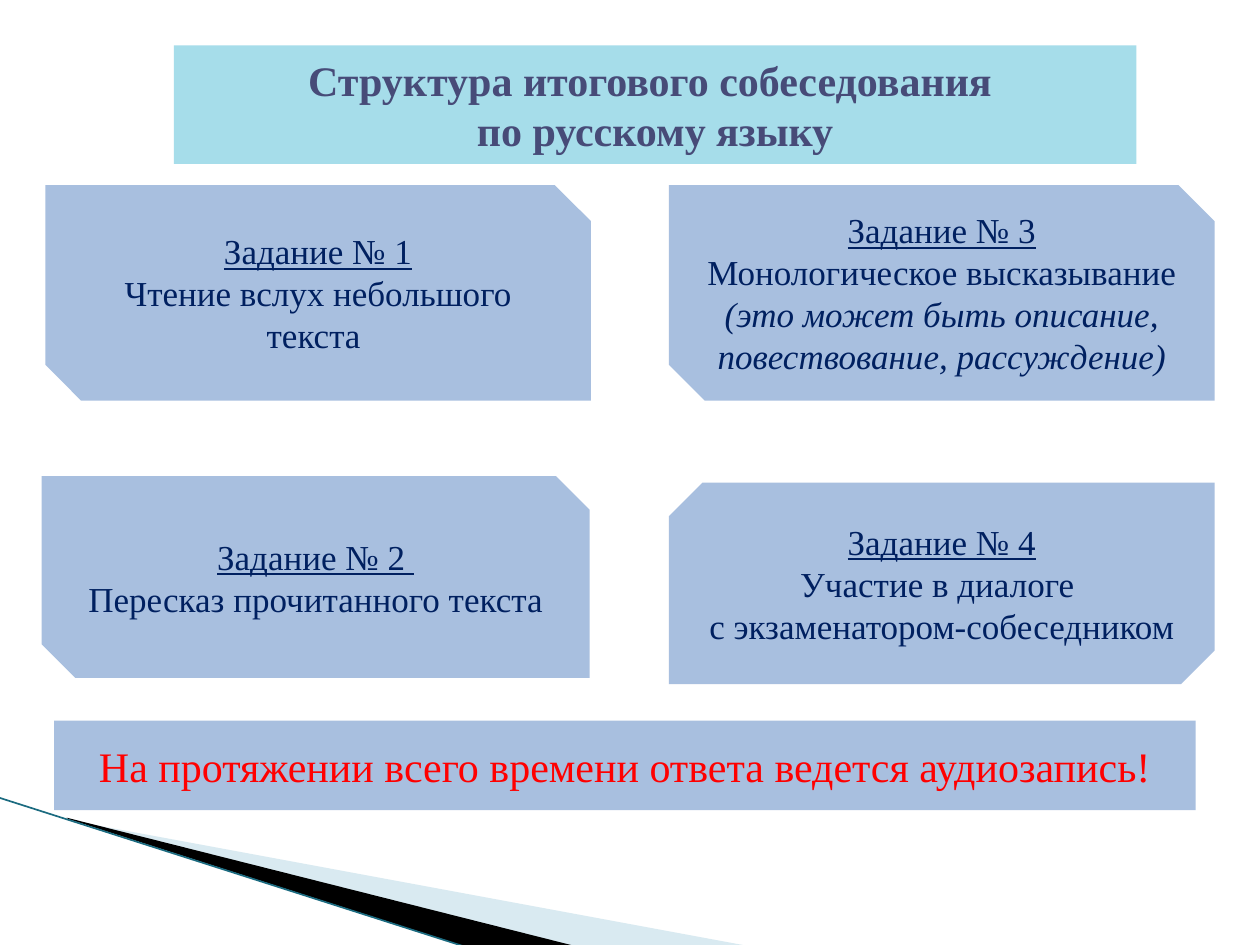
from lxml import etree
from pptx import Presentation
from pptx import util as u
from pptx.dml.color import RGBColor
from pptx.enum import shapes, text
from pptx.oxml.ns import qn

COLS, ROWS = 100, 75


def paint(color, code):
    color.rgb = RGBColor.from_string(code)


class Deck:
    face = "Times New Roman"
    navy, blue, snip = "002060", "A8BFDF", 0.1667

    def __init__(self):
        self.prs = Presentation()
        self.prs.slide_width, self.prs.slide_height = u.Inches(10), u.Inches(7.5)
        self.slide = self.prs.slides.add_slide(self.prs.slide_layouts[5])

    def place(self, col, row):
        return (round(self.prs.slide_width * col / COLS),
                round(self.prs.slide_height * row / ROWS))

    def fill(self, shape, code):
        shape.fill.solid()
        paint(shape.fill.fore_color, code)

    def label(self, shape, lines, size, code, bold=False):
        frame = shape.text_frame
        frame.word_wrap = True
        frame.auto_size = text.MSO_AUTO_SIZE.NONE
        frame.vertical_anchor = text.MSO_ANCHOR.MIDDLE
        for i, line in enumerate(lines):
            para = frame.add_paragraph() if i else frame.paragraphs[0]
            para.alignment = text.PP_ALIGN.CENTER
            font = para.font
            font.name, font.size, font.bold = self.face, u.Pt(size), bold
            paint(font.color, code)
            for words, style in line:
                run = para.add_run()
                run.text = words
                if style == "u":
                    run.font.underline = True
                elif style == "i":
                    run.font.italic = True

    def title(self, box, lines, code, back):
        shape = self.slide.shapes.title
        shape.left, shape.top = self.place(*box[:2])
        shape.width, shape.height = self.place(*box[2:])
        self.fill(shape, back)
        self.label(shape, [[(line, "")] for line in lines], 24, code, True)

    def box(self, kind, box, lines, size, code):
        shape = self.slide.shapes.add_shape(
            kind, *self.place(*box[:2]), *self.place(*box[2:]))
        shape.shadow.inherit = False
        self.fill(shape, self.blue)
        shape.line.fill.background()
        self.label(shape, lines, size, code)
        return shape

    def task(self, box, head, lines, mirror=False):
        kind = shapes.MSO_SHAPE.SNIP_2_DIAG_RECTANGLE
        shape = self.box(kind, box, [[(head, "u")]] + lines, 20, self.navy)
        cuts = (self.snip, 0) if mirror else (0, self.snip)
        shape.adjustments[0], shape.adjustments[1] = cuts

    def wedge(self, points, code, alpha=None):
        first, *rest = [self.place(*p) for p in points]
        pen = self.slide.shapes.build_freeform(*first)
        pen.add_line_segments(rest, close=True)
        shape = pen.convert_to_shape()
        shape.shadow.inherit = False
        self.fill(shape, code)
        shape.line.fill.background()
        if alpha:
            tone = next(shape._element.spPr.iter(qn("a:srgbClr")))
            etree.SubElement(tone, qn("a:alpha"), val=str(alpha * 1000))

    def line(self, start, end, code, width):
        line = self.slide.shapes.add_connector(
            shapes.MSO_CONNECTOR.STRAIGHT, *self.place(*start), *self.place(*end))
        paint(line.line.color, code)
        line.line.width = u.Pt(width)
        etree.SubElement(line._element.spPr, qn("a:effectLst"))


def main():
    deck = Deck()
    deck.wedge([(5.5, 65.1), (59.5, 75.1), (45.6, 75.1), (5.5, 65)], "A0CBDC", 40)
    deck.wedge([(5.3, 64.9), (45.7, 75.1), (37.2, 75.2), (5.4, 65)], "000000")
    deck.line((-0.1, 63.3), (37.1, 75.2), "1B6B80", 0.95)

    deck.title((13.8, 3.6, 76.4, 9.4),
               ["Структура итогового собеседования ", "по русскому языку"],
               "474B78", "A6DDEA")

    left, right, top, wide = 3.6, 53.1, 14.7, 43.3
    deck.task((left, top, wide, 17.1), "Задание № 1",
              [[("Чтение вслух небольшого текста ", "")]])
    deck.task((3.3, 37.8, 43.5, 16), "Задание № 2 ",
              [[("Пересказ прочитанного текста", "")]])
    deck.task((right, 38.3, wide, 16), "Задание № 4",
              [[("Участие в диалоге ", "")],
               [("с экзаменатором-собеседником", "")]], mirror=True)
    deck.task((right, top, wide, 17.1), "Задание № 3",
              [[("Монологическое высказывание ", ""),
                ("(это может быть описание, повествование, рассуждение)", "i")]])

    note = "На протяжении всего времени ответа ведется аудиозапись!"
    deck.box(shapes.MSO_SHAPE.RECTANGLE, (4.3, 57.2, 90.6, 7.1),
             [[(note, "")]], 24, "FF0000")
    deck.prs.save("out.pptx")


if __name__ == "__main__":
    main()
